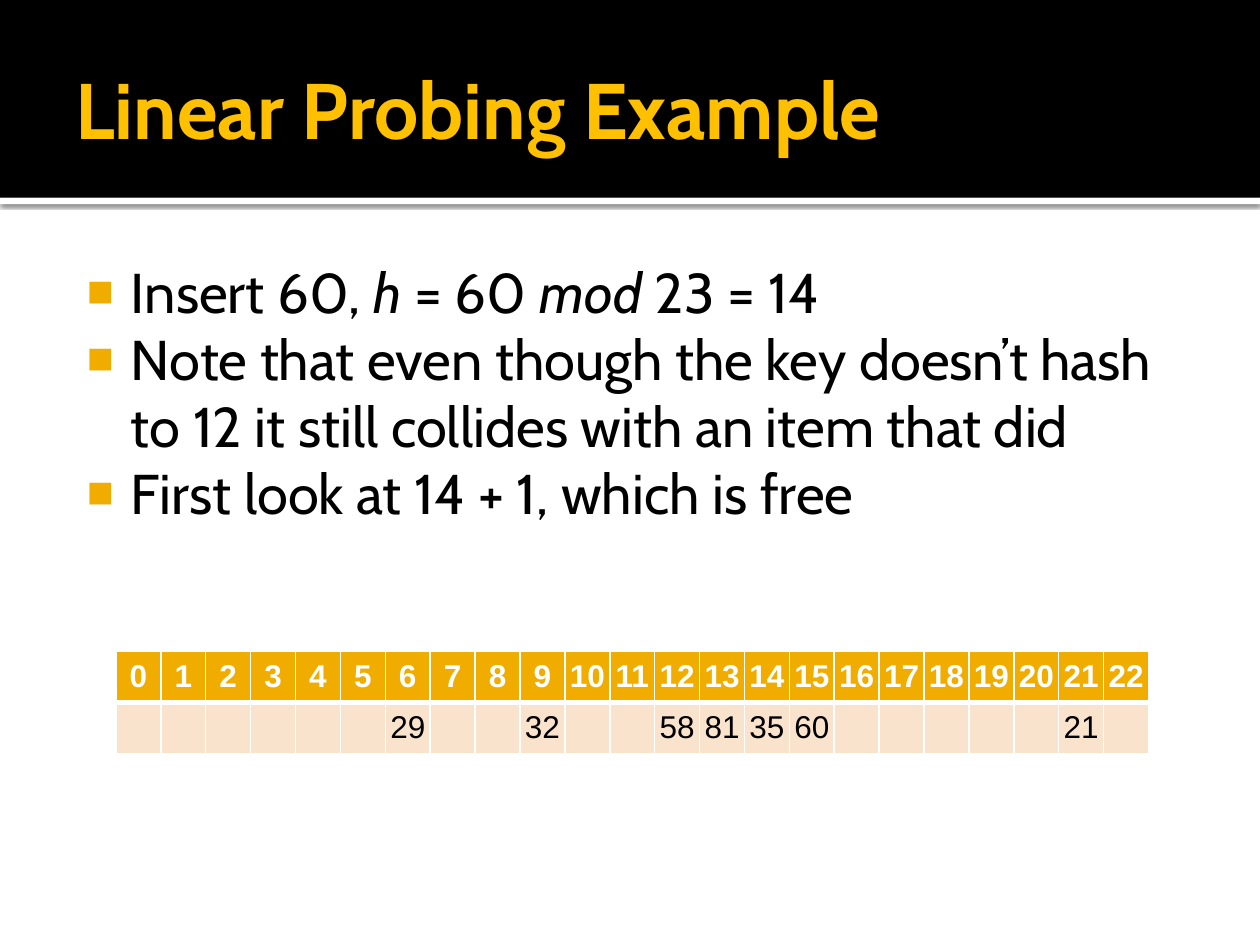
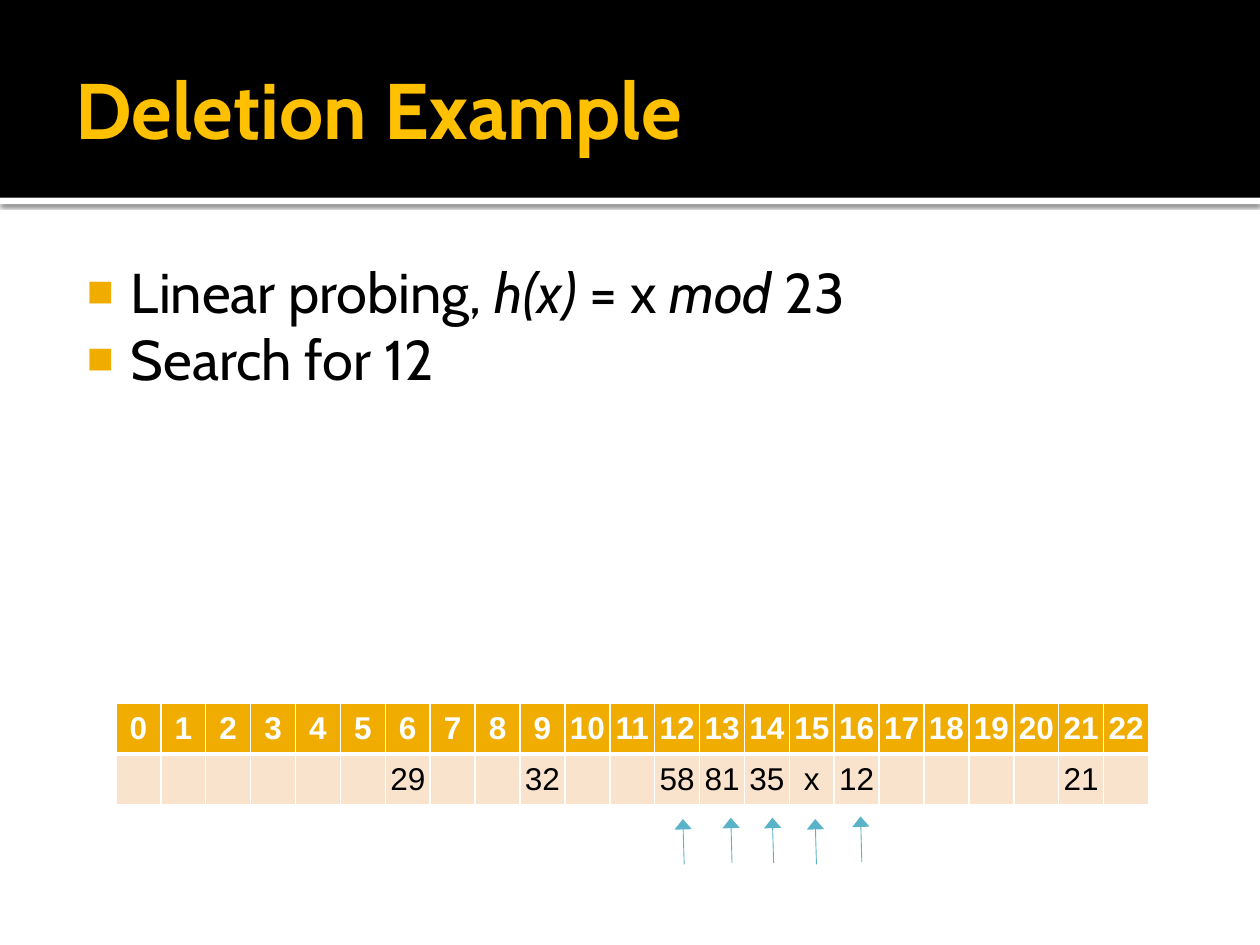
from dataclasses import dataclass

from lxml import etree
from pptx import Presentation
from pptx import util as u
from pptx.dml.color import RGBColor
from pptx.enum import shapes, text
from pptx.oxml.ns import qn


@dataclass(frozen=True)
class Theme:
    white: str = "FFFFFF"
    black: str = "000000"
    title: str = "FFC000"
    accent: str = "F0AD00"
    cell: str = "F9E3CC"
    arrow: str = "5BB3CA"
    text_font: str = "Cabin"
    table_font: str = "Arial"
    title_size: int = 45
    body_size: int = 32
    table_size: int = 18


@dataclass(frozen=True)
class Box:
    left: float
    top: float
    width: float
    height: float

    def lengths(self):
        return [u.Inches(n) for n in (self.left, self.top, self.width, self.height)]


THEME = Theme()
SLOTS = 23
BAND = Box(0, 0, 10, 1.57)
RULE = Box(0, 1.57, 10, 0.05)
TITLE = Box(0.5, 0.17, 9, 1.37)
BODY = Box(0.5, 1.94, 9, 2.73)


def add_xml(parent, tag, **attributes):
    return etree.SubElement(parent, qn(tag), attributes)


def style_font(font, name, size, color, bold=False):
    font.name, font.size, font.bold = name, u.Pt(size), bold
    font.color.rgb = RGBColor.from_string(color)


def set_insets(target, *insets):
    sides = ("margin_left", "margin_top", "margin_right", "margin_bottom")
    for side, inset in zip(sides, insets):
        setattr(target, side, u.Inches(inset))


def add_bar(page, box, color):
    bar = page.shapes.add_shape(shapes.MSO_SHAPE.RECTANGLE, *box.lengths())
    bar.shadow.inherit = False
    bar.fill.solid()
    bar.fill.fore_color.rgb = RGBColor.from_string(color)
    bar.line.fill.background()
    return bar


def add_rule_shadow(rule):
    effects = rule.element.spPr.find(qn("a:effectLst"))
    shadow = add_xml(effects, "a:outerShdw", blurRad=str(u.Pt(2.5)),
                     dist=str(u.Pt(0.8)), dir="5400000", algn="t", rotWithShape="0")
    color = add_xml(shadow, "a:srgbClr", val=THEME.black)
    add_xml(color, "a:alpha", val="60000")


def add_header(page, heading):
    rule = add_bar(page, RULE, THEME.white)
    add_rule_shadow(rule)
    add_bar(page, BAND, THEME.black)
    title = page.shapes.title
    title.element.getparent().append(title.element)
    title.left, title.top, title.width, title.height = TITLE.lengths()
    frame = title.text_frame
    frame.text = heading
    frame.auto_size = text.MSO_AUTO_SIZE.NONE
    frame.vertical_anchor = text.MSO_ANCHOR.MIDDLE
    set_insets(frame, 0.1, 0.05, 0.05, 0.05)
    para = frame.paragraphs[0]
    para.alignment = text.PP_ALIGN.LEFT
    style_font(para.font, THEME.text_font, THEME.title_size, THEME.title, True)


def set_bullet(para):
    properties = para._p.get_or_add_pPr()
    properties.set("marL", str(u.Inches(0.48)))
    properties.set("indent", str(u.Inches(-0.35)))
    add_xml(add_xml(properties, "a:buClr"), "a:srgbClr", val=THEME.accent)
    add_xml(properties, "a:buSzPct", val="80000")
    add_xml(properties, "a:buFont", typeface=THEME.table_font)
    add_xml(properties, "a:buChar", char="■")


def add_bullets(page, box, lines):
    frame = page.shapes.add_textbox(*box.lengths()).text_frame
    frame.word_wrap = True
    set_insets(frame, 0.06, 0.1, 0.1, 0.05)
    for number, line in enumerate(lines):
        para = frame.add_paragraph() if number else frame.paragraphs[0]
        set_bullet(para)
        style_font(para.font, THEME.text_font, THEME.body_size, THEME.black)
        for part, words in enumerate(line.split("*")):
            span = para.add_run()
            span.text = words
            span.font.italic = part % 2 == 1


def set_borders(cell, widths):
    properties = cell._tc.get_or_add_tcPr()
    for side, width in widths.items():
        line = add_xml(properties, f"a:ln{side}", w=str(u.Pt(width)))
        add_xml(add_xml(line, "a:solidFill"), "a:srgbClr", val=THEME.white)


def fill_cell(cell, label, fill, color, bold, borders):
    set_borders(cell, borders)
    cell.fill.solid()
    cell.fill.fore_color.rgb = RGBColor.from_string(fill)
    set_insets(cell, 0, 0, 0, 0)
    cell.vertical_anchor = text.MSO_ANCHOR.MIDDLE
    cell.text = label
    para = cell.text_frame.paragraphs[0]
    para.alignment = text.PP_ALIGN.CENTER
    style_font(para.font, THEME.table_font, THEME.table_size, color, bold)


def add_hash_table(page, box, entries):
    table = page.shapes.add_table(2, SLOTS, *box.lengths()).table
    for row in table.rows:
        row.height = u.Inches(box.height / 2)
    for slot, column in enumerate(table.columns):
        column.width = u.Inches(box.width / SLOTS)
        fill_cell(table.cell(0, slot), str(slot), THEME.accent, THEME.white, True,
                  {"L": 1, "R": 1, "T": 1, "B": 3})
        fill_cell(table.cell(1, slot), entries.get(slot, ""), THEME.cell, THEME.black,
                  False, {"L": 1, "R": 1, "B": 1})


def add_probe_arrows(page, box, tips):
    for across, down in tips:
        tip_x, tip_y = box.left + across, box.top + down
        arrow = page.shapes.add_connector(
            shapes.MSO_CONNECTOR.STRAIGHT, u.Inches(tip_x + 0.01),
            u.Inches(tip_y + 0.36), u.Inches(tip_x), u.Inches(tip_y))
        arrow.line.color.rgb = RGBColor.from_string(THEME.arrow)
        arrow.line.width = u.Pt(0.5)
        add_xml(arrow.line._get_or_add_ln(), "a:tailEnd", type="triangle", w="lg")
        add_xml(arrow.element.spPr, "a:effectLst")


def add_example(deck, heading, lines, table_box, table_states, probe_tips=()):
    page = deck.slides.add_slide(deck.slide_layouts.get_by_name("Title Only"))
    add_header(page, heading)
    add_bullets(page, BODY, lines)
    for entries in table_states:
        add_hash_table(page, table_box, entries)
    add_probe_arrows(page, table_box, probe_tips)


def main():
    deck = Presentation()
    deck.slide_width, deck.slide_height = u.Inches(10), u.Inches(7.5)
    stored = {6: "29", 9: "32", 12: "58", 13: "81", 14: "35", 21: "21"}
    add_example(
        deck, "Linear Probing Example",
        ["Insert 60, *h* = 60 *mod* 23 = 14",
         "Note that even though the key doesn’t hash to 12 it still collides "
         "with an item that did",
         "First look at 14 + 1, which is free"],
        Box(0.92, 5.17, 8.2, 0.81), [stored, {**stored, 15: "60"}])
    add_example(
        deck, "Deletion Example",
        ["Linear probing, *h(x)* = x *mod* 23", "Search for 12"],
        Box(0.92, 5.58, 8.2, 0.81), [{**stored, 15: "x", 16: "12"}],
        [(4.5, 0.92), (4.88, 0.91), (5.21, 0.91), (5.55, 0.92), (5.91, 0.9)])
    deck.save("out.pptx")


if __name__ == "__main__":
    main()
